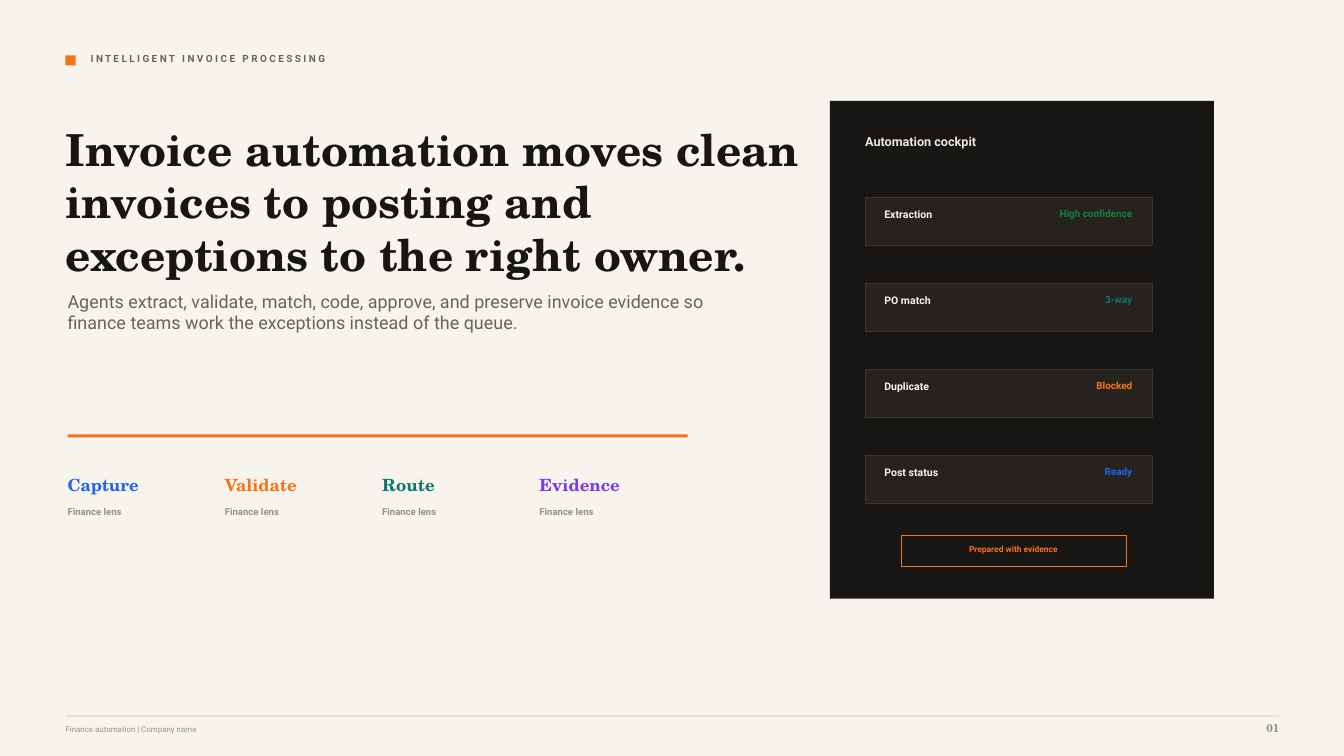
import pptx
import pptx.dml.color
import pptx.enum.shapes
import pptx.enum.text
import pptx.util
from pptx.util import Inches

KICKER = "INTELLIGENT INVOICE PROCESSING"
TITLE = "Invoice automation moves clean invoices to posting and exceptions to the right owner."
SUBTITLE = ("Agents extract, validate, match, code, approve, and preserve invoice evidence "
            "so finance teams work the exceptions instead of the queue.")
LENSES = [("Capture", "blue"), ("Validate", "orange"), ("Route", "teal"), ("Evidence", "violet")]
LENS_NOTE = "Finance lens"
COCKPIT_TITLE = "Automation cockpit"
CHECKS = [
    ("Extraction", "High confidence", "green"),
    ("PO match", "3-way", "teal"),
    ("Duplicate", "Blocked", "orange"),
    ("Post status", "Ready", "blue"),
]
BADGE = "Prepared with evidence"
FOOTER = "Finance automation | Company name"
PAGE_NUMBER = "01"

SANS, SERIF = "Roboto", "TeX Gyre Schola"
THEME = {
    "colors": {
        "paper": "F7F4EE", "ink": "171614", "body": "69635A", "muted": "9A9184",
        "rule": "D9D0C3", "light": "EDE7DD", "row": "26231F", "row_edge": "3C362E",
        "orange": "F97316", "blue": "2563EB", "teal": "0F766E", "violet": "7C3AED",
        "green": "15803D",
    },
    # style: (font, size, bold)
    "type": {
        "kicker": (SANS, 7.1, True), "title": (SERIF, 31.5, True),
        "subtitle": (SANS, 12.8, False), "lens": (SERIF, 12, True),
        "lens_note": (SANS, 6.8, True), "cockpit": (SANS, 9, True),
        "check": (SANS, 7.5, True), "status": (SANS, 7.1, True),
        "badge": (SANS, 6, True), "footer": (SANS, 5.6, False),
        "number": (SERIF, 8.2, True),
    },
    "line_width": 0.75,
}
ALIGN = pptx.enum.text.PP_ALIGN

PAGE_WIDTH, PAGE_HEIGHT = 13.33, 7.5
MARGIN, CONTENT_LEFT = 0.65, 0.67
LENS_TOP, LENS_PITCH = 4.71, 1.56
ROW_LEFT, ROW_WIDTH, ROW_HEIGHT = 8.58, 2.85, 0.48
FIRST_ROW, LAST_ROW = 1.96, 4.52


def color(name):
    return pptx.dml.color.RGBColor.from_string(THEME["colors"][name])


def add_box(page, area, fill=None, line=None):
    box = page.shapes.add_shape(
        pptx.enum.shapes.MSO_SHAPE.RECTANGLE, *map(Inches, area))
    box.shadow.inherit = False
    if fill:
        box.fill.solid()
        box.fill.fore_color.rgb = color(fill)
    else:
        box.fill.background()
    if line:
        box.line.color.rgb = color(line)
        box.line.width = pptx.util.Pt(THEME["line_width"])
    else:
        box.line.fill.background()


def add_text(page, area, text, style, tint, align=ALIGN.LEFT):
    frame = page.shapes.add_textbox(*map(Inches, area)).text_frame
    frame_format = {
        "word_wrap": True, "margin_left": 0, "margin_top": 0,
        "margin_right": 0, "margin_bottom": 0,
    }
    for key, value in frame_format.items():
        setattr(frame, key, value)
    para = frame.paragraphs[0]
    para.alignment = align
    span = para.add_run()
    span.text = text
    name, size, bold = THEME["type"][style]
    font_format = {"name": name, "size": pptx.util.Pt(size), "bold": bold}
    for key, value in font_format.items():
        setattr(span.font, key, value)
    span.font.color.rgb = color(tint)


def add_message(page):
    """Kicker, headline, subtitle and the orange rule."""
    add_box(page, (MARGIN, 0.55, 0.1, 0.1), "orange")
    add_text(page, (0.9, 0.52, 5.83, 0.19), " ".join(KICKER), "kicker", "body")
    add_text(page, (MARGIN, 1.21, 7.71, 1.31), TITLE, "title", "ink")
    add_text(page, (CONTENT_LEFT, 2.88, 6.46, 0.92), SUBTITLE, "subtitle", "body")
    add_box(page, (CONTENT_LEFT, 4.31, 6.15, 0.03), "orange")


def add_lenses(page):
    for index, (label, tint) in enumerate(LENSES):
        left = CONTENT_LEFT + index * LENS_PITCH
        add_text(page, (left, LENS_TOP, 1.25, 0.21), label, "lens", tint)
        add_text(page, (left, LENS_TOP + 0.31, 1.15, 0.17), LENS_NOTE, "lens_note", "muted")


def add_cockpit(page):
    add_box(page, (8.23, 1, 3.81, 4.94), "ink")
    add_text(page, (ROW_LEFT, 1.33, 2.29, 0.25), COCKPIT_TITLE, "cockpit", "light")
    pitch = (LAST_ROW - FIRST_ROW) / (len(CHECKS) - 1)
    for index, (label, status, tint) in enumerate(CHECKS):
        top = FIRST_ROW + index * pitch
        add_box(page, (ROW_LEFT, top, ROW_WIDTH, ROW_HEIGHT), "row", "row_edge")
        add_text(page, (ROW_LEFT + 0.19, top + 0.1, 1.35, 0.17), label, "check", "paper")
        add_text(page, (ROW_LEFT + 1.65, top + 0.1, 1, 0.17), status, "status", tint,
                 ALIGN.RIGHT)
    add_box(page, (8.94, 5.31, 2.23, 0.31), line="orange")
    add_text(page, (9.06, 5.4, 1.98, 0.14), BADGE, "badge", "orange", ALIGN.CENTER)


def add_footer(page):
    add_box(page, (MARGIN, 7.1, 12.04, 0.01), "rule")
    add_text(page, (MARGIN, 7.19, 7.92, 0.15), FOOTER, "footer", "muted")
    add_text(page, (12.19, 7.15, 0.5, 0.19), PAGE_NUMBER, "number", "muted", ALIGN.RIGHT)


def main():
    deck = pptx.Presentation()
    deck.slide_width, deck.slide_height = Inches(PAGE_WIDTH), Inches(PAGE_HEIGHT)
    page = deck.slides.add_slide(deck.slide_layouts[6])
    add_box(page, (0, 0, PAGE_WIDTH, PAGE_HEIGHT), "paper")
    add_message(page)
    add_lenses(page)
    add_cockpit(page)
    add_footer(page)
    deck.save("out.pptx")


if __name__ == "__main__":
    main()
